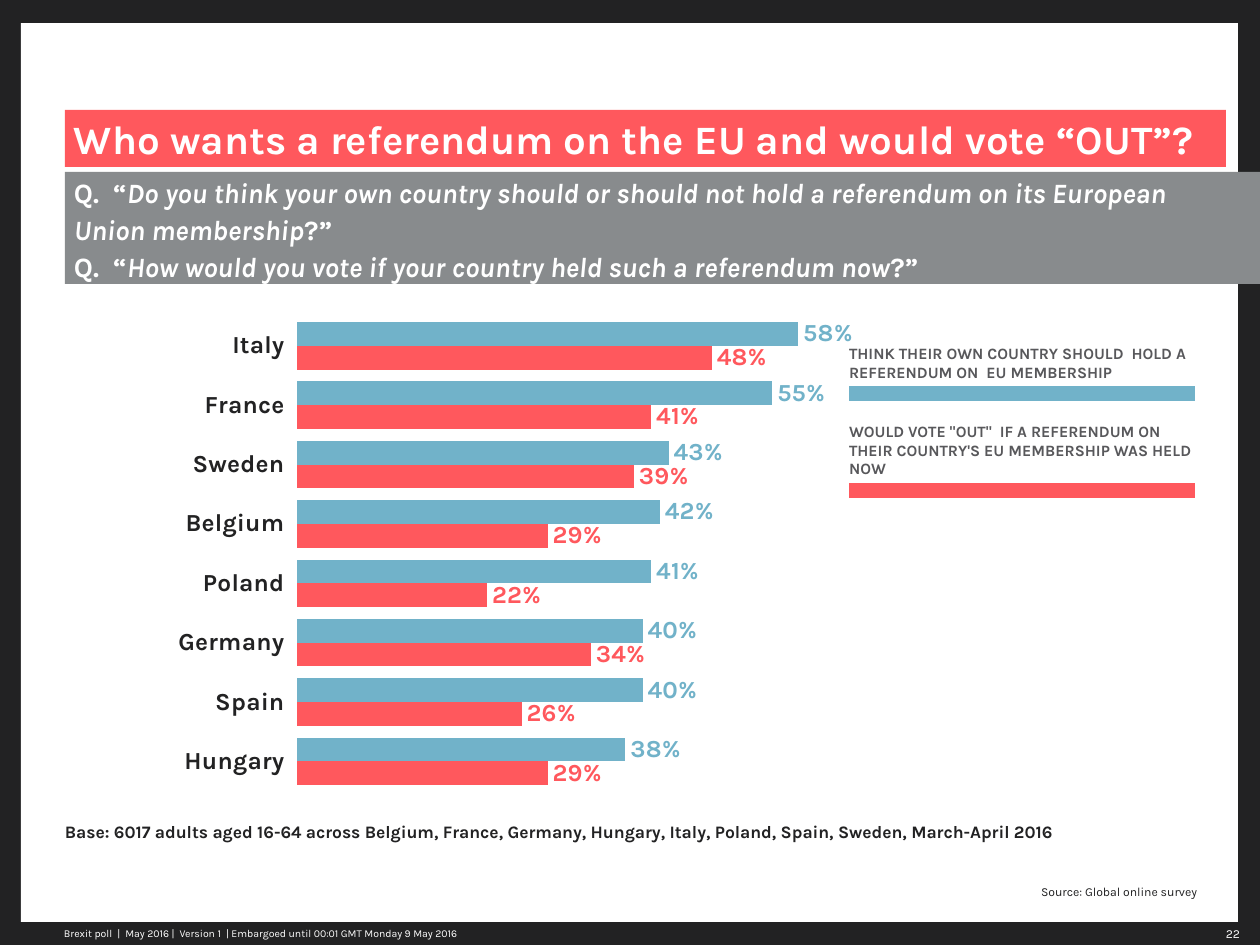
"""Build the slide on referendum support and the "OUT" vote by country."""
from dataclasses import dataclass
from typing import Optional

from lxml import etree
from pptx import Presentation
from pptx import util as u
from pptx.chart.data import CategoryChartData
from pptx.dml.color import RGBColor
from pptx.enum import chart as charts, shapes, text
from pptx.oxml import parse_xml
from pptx.oxml.ns import nsdecls, qn

PX = 914400 / 126
FONT = "Karla"
DARK = RGBColor(0x22, 0x22, 0x23)
WHITE = RGBColor(0xFF, 0xFF, 0xFF)
RED = RGBColor(0xFF, 0x58, 0x5D)
BLUE = RGBColor(0x71, 0xB2, 0xC9)
GREY = RGBColor(0x88, 0x8B, 0x8D)
LEGEND_GREY = RGBColor(0x58, 0x58, 0x5B)
NO_TABLE_STYLE = "{2D5ABB26-0587-4C30-8999-92F81FD0307C}"
COUNTRIES = ["Italy", "France", "Sweden", "Belgium", "Poland", "Germany", "Spain", "Hungary"]


@dataclass(frozen=True)
class Box:
    left: int
    top: int
    width: int
    height: int

    def emu(self) -> list[int]:
        return [px(side) for side in (self.left, self.top, self.width, self.height)]


@dataclass(frozen=True)
class Measure:
    name: str
    legend: str
    color: RGBColor
    values: tuple[int, ...]
    legend_height: int


MEASURES = [
    Measure("Hold a referendum", "THINK THEIR OWN COUNTRY SHOULD  HOLD A REFERENDUM ON  EU MEMBERSHIP",
            BLUE, (58, 55, 43, 42, 41, 40, 40, 38), 48),
    Measure("Vote out", "WOULD VOTE \"OUT\"  IF A REFERENDUM ON THEIR COUNTRY'S EU MEMBERSHIP WAS HELD NOW",
            RED, (48, 41, 39, 29, 22, 34, 26, 29), 67),
]
QUESTIONS = [
    [("Q.  “", False),
     ("Do you think your own country should or should not hold a referendum on its European", True)],
    [("Union membership", True), ("?”", False)],
    [("Q.  “", False), ("How would you vote if your country held such a referendum now", True),
     ("?”", False)],
]


def px(length: int) -> int:
    return round(length * PX)


def style_font(font, size: int, color: RGBColor, bold: bool = False, italic: bool = False) -> None:
    font.name, font.size, font.bold, font.italic = FONT, u.Pt(size), bold, italic
    font.color.rgb = color


def write(frame, paragraphs, *, size: int, color: RGBColor, bold: bool = False,
          align=text.PP_ALIGN.LEFT, anchor=text.MSO_ANCHOR.TOP,
          margins: tuple[int, int] = (0, 0), spacing: float = 1.0) -> None:
    """Fill a frame with a string, or with paragraphs of (text, italic) runs."""
    if isinstance(paragraphs, str):
        paragraphs = [[(paragraphs, False)]]
    frame.auto_size = text.MSO_AUTO_SIZE.NONE
    frame.word_wrap = True
    frame.vertical_anchor = anchor
    frame.margin_left = frame.margin_right = px(margins[0])
    frame.margin_top = frame.margin_bottom = px(margins[1])
    for index, runs in enumerate(paragraphs):
        paragraph = frame.paragraphs[0] if index == 0 else frame.add_paragraph()
        paragraph.alignment = align
        paragraph.line_spacing = spacing
        for content, italic in runs:
            run = paragraph.add_run()
            run.text = content
            style_font(run.font, size, color, bold, italic)


def add_panel(slide, box: Box, color: RGBColor):
    panel = slide.shapes.add_shape(shapes.MSO_SHAPE.RECTANGLE, *box.emu())
    panel.shadow.inherit = False
    panel.fill.solid()
    panel.fill.fore_color.rgb = color
    panel.line.fill.background()
    return panel


def add_text(slide, box: Box, content: str, **text_format) -> None:
    write(slide.shapes.add_textbox(*box.emu()).text_frame, content, **text_format)


def add_title(slide, box: Box, content: str) -> None:
    title = slide.shapes.title
    title.left, title.top, title.width, title.height = box.emu()
    title.fill.solid()
    title.fill.fore_color.rgb = RED
    write(title.text_frame, content, size=23, color=WHITE, bold=True,
          anchor=text.MSO_ANCHOR.BOTTOM, margins=(9, 4))


def place_plot(chart, **fractions: float) -> None:
    edges = "".join(f'<c:{key}Mode val="edge"/>' for key in "xy")
    sides = "".join(f'<c:{key} val="{value}"/>' for key, value in fractions.items())
    plot_area = chart._chartSpace.chart.plotArea
    for layout in plot_area.findall(qn("c:layout")):
        plot_area.remove(layout)
    plot_area.insert(0, parse_xml(
        f'<c:layout {nsdecls("c")}><c:manualLayout><c:layoutTarget val="inner"/>'
        f'{edges}{sides}</c:manualLayout></c:layout>'))


def add_bars(slide, box: Box) -> None:
    data = CategoryChartData(number_format="0")
    data.categories = COUNTRIES
    for measure in MEASURES:
        data.add_series(measure.name, measure.values)
    chart = slide.shapes.add_chart(charts.XL_CHART_TYPE.BAR_CLUSTERED, *box.emu(), data).chart
    chart.has_legend = chart.has_title = False
    style_font(chart.font, 18, DARK)
    category_axis, value_axis = chart.category_axis, chart.value_axis
    category_axis.reverse_order = True
    category_axis.format.line.fill.background()
    style_font(category_axis.tick_labels.font, 14, DARK, bold=True)
    value_axis.minimum_scale, value_axis.maximum_scale = 0, 70
    value_axis.has_major_gridlines = value_axis.visible = False
    plot = chart.plots[0]
    plot.gap_width, plot.overlap, plot.vary_by_categories = 50, 0, False
    for series, measure in zip(plot.series, MEASURES):
        series.format.fill.solid()
        series.format.fill.fore_color.rgb = measure.color
        labels = series.data_labels
        labels.show_value = True
        labels.number_format, labels.number_format_is_linked = "0\\%", False
        labels.position = charts.XL_LABEL_POSITION.OUTSIDE_END
        style_font(labels.font, 14, measure.color, bold=True)
    place_plot(chart, x=0.206, y=0.03, w=0.535, h=0.941)


def fill_bar_cell(cell, color: Optional[RGBColor]) -> None:
    cell.margin_left = cell.margin_right = cell.margin_top = cell.margin_bottom = 0
    paragraph = cell.text_frame.paragraphs[0]
    etree.SubElement(paragraph._p, qn("a:endParaRPr"), sz="400")
    if color is None:
        cell.fill.background()
    else:
        cell.fill.solid()
        cell.fill.fore_color.rgb = color


def add_legend(slide, box: Box) -> None:
    table = slide.shapes.add_table(3 * len(MEASURES), 1, *box.emu()).table
    table.first_row = table.horz_banding = False
    table._tbl.tblPr.find(qn("a:tableStyleId")).text = NO_TABLE_STYLE
    for index, measure in enumerate(MEASURES):
        for offset, height in enumerate((measure.legend_height, 15, 15)):
            table.rows[3 * index + offset].height = px(height)
        label, bar, gap = (table.cell(3 * index + offset, 0) for offset in range(3))
        label.fill.background()
        write(label.text_frame, measure.legend, size=9, color=LEGEND_GREY, bold=True)
        label.vertical_anchor = text.MSO_ANCHOR.BOTTOM
        label.margin_left, label.margin_right = 0, px(4)
        label.margin_top, label.margin_bottom = px(6), px(4)
        fill_bar_cell(bar, measure.color)
        fill_bar_cell(gap, None)


def main() -> None:
    presentation = Presentation()
    presentation.slide_width, presentation.slide_height = px(1260), px(945)
    slide = presentation.slides.add_slide(presentation.slide_layouts.get_by_name("Title Only"))
    slide.background.fill.solid()
    slide.background.fill.fore_color.rgb = DARK

    page = add_panel(slide, Box(21, 23, 1217, 899), WHITE)
    slide.shapes.title._element.addprevious(page._element)
    add_title(slide, Box(65, 110, 1161, 57), "Who wants a referendum on the EU and would vote “OUT”?")
    questions = add_panel(slide, Box(65, 172, 1239, 112), GREY)
    write(questions.text_frame, QUESTIONS, size=16, color=WHITE, bold=True,
          margins=(9, 0), spacing=1.1)
    add_bars(slide, Box(64, 301, 1131, 505))
    add_legend(slide, Box(849, 338, 346, 175))

    right, bottom, middle = text.PP_ALIGN.RIGHT, text.MSO_ANCHOR.BOTTOM, text.MSO_ANCHOR.MIDDLE
    add_text(slide, Box(65, 819, 1130, 23),
             "Base: 6017 adults aged 16-64 across Belgium, France, Germany, Hungary, Italy, Poland, "
             "Spain, Sweden, March-April 2016",
             size=10, color=DARK, bold=True, anchor=bottom, spacing=1.1)
    add_text(slide, Box(850, 876, 347, 23), "Source: Global online survey",
             size=7, color=DARK, align=right, anchor=bottom, spacing=1.1)
    add_text(slide, Box(64, 922, 577, 23),
             "Brexit poll  |  May 2016 |  Version 1  | Embargoed until 00:01 GMT Monday 9 May 2016",
             size=6, color=WHITE, anchor=middle)
    add_text(slide, Box(1181, 921, 68, 25), "22", size=7, color=WHITE, align=right,
             margins=(9, 4), spacing=1.1)
    presentation.save("out.pptx")


if __name__ == "__main__":
    main()
